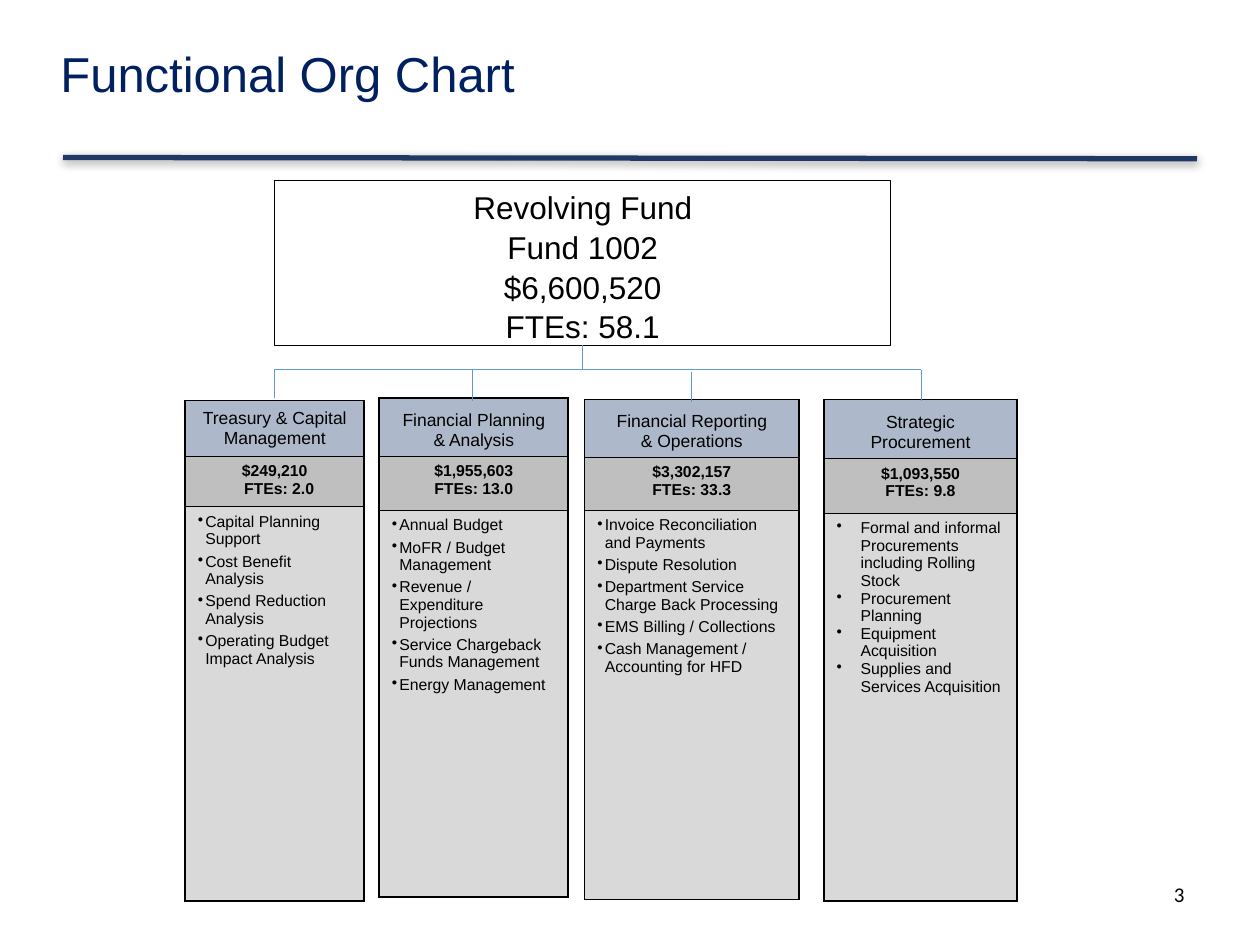
from lxml import etree
from pptx import Presentation
from pptx import util as u
from pptx.dml.color import RGBColor
from pptx.enum import shapes, text
from pptx.oxml import ns

COLORS = {
    "title": "002060", "rule": "203864", "link": "5B9BD5", "text": "000000",
    "head": "ADB9CA", "budget": "BFBFBF", "duties": "D9D9D9",
}
TIGHT = {"hang": 0.06, "before": 1, "after": 1.6}
WIDE = {"hang": 0.19}

# Each division: position, row heights, head, budget, duties and bullet format
DIVISIONS = [
    {"at": (1.47, 3.18), "width": 1.42, "rows": (0.44, 0.4, 3.13),
     "head": ["Treasury & Capital Management"], "anchor": text.MSO_ANCHOR.MIDDLE,
     "budget": ["$249,210", "FTEs: 2.0"], "shift": 0.07, "bullets": TIGHT,
     "duties": ["Capital Planning Support", "Cost Benefit Analysis",
                "Spend Reduction Analysis", "Operating Budget Impact Analysis"]},
    {"at": (3.01, 3.16), "width": 1.5, "rows": (0.46, 0.43, 3.07),
     "head": ["Financial Planning", "& Analysis"],
     "budget": ["$1,955,603", "FTEs: 13.0"], "bullets": TIGHT,
     "duties": ["Annual Budget", "MoFR / Budget Management",
                "Revenue / Expenditure Projections",
                "Service Chargeback Funds Management", "Energy Management"]},
    {"at": (4.64, 3.17), "width": 1.7, "rows": (0.46, 0.42, 3.09),
     "head": ["Financial Reporting", "& Operations"],
     "budget": ["$3,302,157", "FTEs: 33.3"], "bullets": TIGHT,
     "duties": ["Invoice Reconciliation and Payments", "Dispute Resolution",
                "Department Service Charge Back Processing",
                "EMS Billing / Collections",
                "Cash Management / Accounting for HFD"]},
    {"at": (6.54, 3.17), "width": 1.53, "rows": (0.47, 0.43, 3.08),
     "head": ["Strategic", "Procurement"],
     "budget": ["$1,093,550", "FTEs: 9.8"], "bullets": WIDE,
     "duties": ["Formal and informal Procurements including Rolling Stock",
                "Procurement Planning", "Equipment Acquisition",
                "Supplies and Services Acquisition"]},
]
# Drops from the branch line: x, top, bottom
DROPS = [(2.18, 2.93, 3.16), (3.75, 2.94, 3.18), (5.49, 2.95, 3.19), (7.31, 2.94, 3.18)]


def rgb(name):
    return RGBColor.from_string(COLORS[name])


def add_xml(parent, tag, **attributes):
    return etree.SubElement(parent, ns.qn(tag), attributes)


def write(frame, lines, size=9, font="Arial", color="text", bold=False,
          align=text.PP_ALIGN.LEFT, spacing=None, hang=0, before=0, after=0):
    frame.word_wrap = True
    for index, line in enumerate(lines):
        para = frame.paragraphs[0] if index == 0 else frame.add_paragraph()
        para.alignment = align
        if hang:
            props = para._p.get_or_add_pPr()
            props.set("marL", str(u.Inches(hang)))
            props.set("indent", str(-u.Inches(hang)))
            add_xml(props, "a:buChar", char="•")
        if spacing:
            para.line_spacing = spacing
        para.space_before = u.Pt(before if index else 0)
        para.space_after = u.Pt(after)
        span = para.add_run()
        span.text = line
        span.font.size = u.Pt(size)
        span.font.name = font
        span.font.bold = bold
        span.font.color.rgb = rgb(color)


def add_text(page, left, top, width, height, lines, **style):
    box = page.shapes.add_textbox(*map(u.Inches, (left, top, width, height)))
    write(box.text_frame, lines, **style)
    return box


def add_line(page, start, end, color="link", width=0.5):
    line = page.shapes.add_connector(
        shapes.MSO_CONNECTOR.STRAIGHT, *map(u.Inches, (*start, *end)))
    line.line.color.rgb = rgb(color)
    line.line.width = u.Pt(width)
    effects = add_xml(line._element.spPr, "a:effectLst")
    return line, effects


def add_shadow(effects):
    shadow = add_xml(effects, "a:outerShdw", blurRad=str(u.Pt(5)),
                     dist=str(u.Pt(1.6)), dir="5400000", rotWithShape="0")
    black = add_xml(shadow, "a:srgbClr", val=COLORS["text"])
    add_xml(black, "a:alpha", val="38000")


def format_cell(cell, fill, top, bottom):
    props = cell._tc.get_or_add_tcPr()
    for side, width in (("L", 1), ("R", 1), ("T", top), ("B", bottom)):
        border = add_xml(props, f"a:ln{side}", w=str(u.Pt(width)))
        add_xml(add_xml(border, "a:solidFill"), "a:srgbClr", val=COLORS["text"])
    cell.fill.solid()
    cell.fill.fore_color.rgb = rgb(fill)


def add_division(page, division):
    rows = division["rows"]
    frame = page.shapes.add_table(3, 1, *map(
        u.Inches, (*division["at"], division["width"], sum(rows))))
    table = frame.table
    table.first_row = table.horz_banding = False
    for row, height in zip(table.rows, rows):
        row.height = u.Inches(height)
    head, budget, duties = (table.cell(index, 0) for index in range(3))
    format_cell(head, "head", 1, 0.25)
    format_cell(budget, "budget", 0.25, 0.25)
    format_cell(duties, "duties", 0.25, 1)
    head.vertical_anchor = division.get("anchor", text.MSO_ANCHOR.BOTTOM)
    center = text.PP_ALIGN.CENTER
    write(head.text_frame, division["head"], size=10, align=center)
    write(budget.text_frame, division["budget"], bold=True, align=center)
    if "shift" in division:
        staff = budget.text_frame.paragraphs[1]
        staff._p.get_or_add_pPr().set("marL", str(u.Inches(division["shift"])))
    write(duties.text_frame, division["duties"], **division["bullets"])


def add_fund(page):
    box = page.shapes.add_shape(
        shapes.MSO_SHAPE.RECTANGLE, *map(u.Inches, (2.18, 1.43, 4.89, 1.31)))
    box.shadow.inherit = False
    box.fill.background()
    box.line.color.rgb = rgb("text")
    box.line.width = u.Pt(0.75)
    frame = box.text_frame
    frame.vertical_anchor = text.MSO_ANCHOR.TOP
    frame.auto_size = text.MSO_AUTO_SIZE.SHAPE_TO_FIT_TEXT
    write(frame, ["Revolving Fund", "Fund 1002", "$6,600,520", "FTEs: 58.1"],
          size=18, align=text.PP_ALIGN.CENTER, spacing=1.05)
    return box


def main():
    deck = Presentation()
    deck.slide_width, deck.slide_height = u.Inches(10), u.Inches(7.5)
    page = deck.slides.add_slide(deck.slide_layouts[6])

    # Title, rule and page number
    _, effects = add_line(page, (0.5, 1.25), (9.5, 1.26), "rule", 3)
    add_shadow(effects)
    title = add_text(page, 0.48, 0.34, 6.86, 0.92, ["Functional Org Chart"],
                     size=28, color="title", spacing=0.9).text_frame
    title.margin_left = title.margin_right = title.margin_bottom = 0
    title.margin_top = u.Inches(0.06)
    add_text(page, 7.17, 6.95, 2.33, 0.4, ["3"], size=12, font="Calibri",
             align=text.PP_ALIGN.RIGHT)

    # Divisions and the fund above them
    for division in DIVISIONS:
        add_division(page, division)
    fund = add_fund(page)

    # Branch lines
    add_line(page, (2.18, 2.93), (7.31, 2.93))
    for x, top, bottom in DROPS:
        add_line(page, (x, bottom), (x, top))
    stem, _ = add_line(page, (4.62, 2.74), (4.62, 2.94))
    stem.begin_connect(fund, 2)
    stem.end_x = stem.begin_x

    deck.save("out.pptx")


if __name__ == "__main__":
    main()
